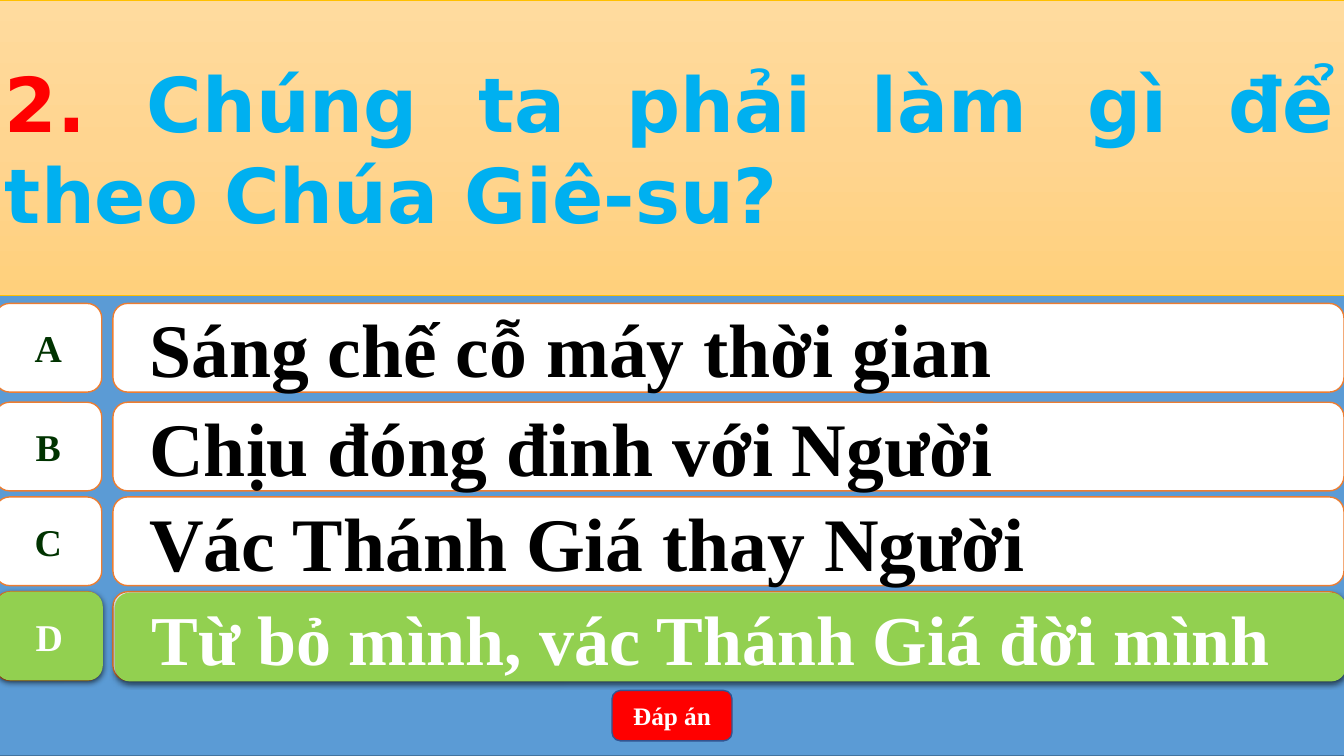
"""Builds a quiz slide with one question, four answers and the right one lit."""
from copy import deepcopy

from lxml.etree import SubElement
from pptx import Presentation
from pptx.dml.color import RGBColor
from pptx.enum.shapes import MSO_SHAPE as Shape
from pptx.enum.text import MSO_ANCHOR as Anchor, PP_ALIGN as Align
from pptx.oxml.ns import qn
from pptx.util import Inches, Pt

SERIF = "Times New Roman"
SANS = "DejaVu Sans"
WHITE, BLACK, ORANGE, GREEN = "FFFFFF", "000000", "ED7D31", "92D050"


def color(value):
    """Turn a hex string into a colour."""
    return RGBColor.from_string(value)


class QuizSlide:
    """Holds the style and the current slide."""

    def __init__(self, deck):
        """Add a blank slide to the deck."""
        self.slide = deck.slides.add_slide(deck.slide_layouts[6])

    def panel(self, kind, box, fill, line=None, width=1):
        """Draw a filled shape without a shadow."""
        panel = self.slide.shapes.add_shape(kind, *map(Inches, box))
        panel.shadow.inherit = False
        panel.fill.solid()
        panel.fill.fore_color.rgb = color(fill)
        if line:
            panel.line.color.rgb = color(line)
            panel.line.width = Pt(width)
        else:
            panel.line.fill.background()
        return panel

    def gradient(self, panel, tints):
        """Fill a panel from top to bottom with evenly spaced tints."""
        panel.fill.gradient()
        panel.fill.gradient_angle = 270
        stop_list = panel._element.spPr.find(".//" + qn("a:gsLst"))
        while len(stop_list) < len(tints):
            stop_list.append(deepcopy(stop_list[0]))
        for index, (stop, tint) in enumerate(zip(panel.fill.gradient_stops, tints)):
            stop.color.rgb = color(tint)
            stop.position = index / (len(tints) - 1)

    def glow(self, panel):
        """Cast a soft shadow straight down."""
        effects = panel._element.spPr.find(qn("a:effectLst"))
        shadow = SubElement(effects, qn("a:outerShdw"), blurRad=str(Pt(4.5)),
                            dist=str(Pt(1.5)), dir="5400000", algn="ctr", rotWithShape="0")
        tone = SubElement(shadow, qn("a:srgbClr"), val=BLACK)
        SubElement(tone, qn("a:alpha"), val="63000")

    def caption(self, panel, pieces, size, font=SERIF, align=Align.CENTER, wrap=True):
        """Put bold coloured pieces of text in one paragraph."""
        frame = panel.text_frame
        frame.word_wrap = wrap
        frame.vertical_anchor = Anchor.MIDDLE
        paragraph = frame.paragraphs[0]
        paragraph.alignment = align
        style = {"name": font, "size": Pt(size), "bold": True}
        for words, tint in pieces:
            run = paragraph.add_run()
            run.text = words
            for key, value in style.items():
                setattr(run.font, key, value)
            run.font.color.rgb = color(tint)
        return paragraph

    def plates(self, left, top, answer_shift, fill, line=None):
        """Draw the letter plate and the answer plate of one row."""
        badge = self.panel(Shape.FLOWCHART_ALTERNATE_PROCESS,
                           (left, top, 1.06, 0.88), fill, line)
        answer = self.panel(Shape.ROUNDED_RECTANGLE,
                            (left + 1.17 + answer_shift, top + answer_shift, 12.21, 0.88),
                            fill, line)
        return badge, answer

    def label(self, badge, answer, letter, words, size, letter_tint, words_tint):
        """Put the letter and the answer on their plates."""
        self.caption(badge, [(letter, letter_tint)], 27, wrap=False)
        paragraph = self.caption(answer, [(words, words_tint)], size, align=Align.LEFT)
        paragraph.level = 1
        indents = {"marL": Inches(0.5), "indent": Inches(-0.28)}
        for key, value in indents.items():
            paragraph._p.get_or_add_pPr().set(key, str(value))


def main():
    """Build and save the slide."""
    deck = Presentation()
    deck.slide_width, deck.slide_height = Inches(13.33), Inches(7.5)
    quiz = QuizSlide(deck)
    quiz.panel(Shape.RECTANGLE, (-0.05, 0, 13.39, 7.5), "5B9BD5", "43739E")

    wrong_answers = [
        ("A", 3.01, "Sáng chế cỗ máy thời gian"),
        ("B", 3.99, "Chịu đóng đinh với Người"),
        ("C", 4.93, "Vác Thánh Giá thay Người"),
    ]
    for letter, top, words in wrong_answers:
        badge, answer = quiz.plates(-0.05, top, 0, WHITE, ORANGE)
        quiz.label(badge, answer, letter, words, 54, "003300", BLACK)

    quiz.plates(-0.05, 5.87, 0, WHITE, ORANGE)
    right_plates = quiz.plates(-0.04, 5.87, 0.01, GREEN)
    for plate in right_plates:
        quiz.glow(plate)
    quiz.label(*right_plates, "D", "Từ bỏ mình, vác Thánh Giá đời mình", 50, WHITE, WHITE)

    reveal = quiz.panel(Shape.ROUNDED_RECTANGLE, (6.07, 6.85, 1.19, 0.5), "FF0000", "325491")
    quiz.caption(reveal, [("Đáp án", WHITE)], 18)

    question = quiz.panel(Shape.RECTANGLE, (-0.05, 0, 13.39, 2.93), "FFD590", "FFC000", 0.5)
    quiz.gradient(question, ["FFDB9E", "FFD590", "FFD07C"])
    quiz.caption(question, [("2. ", "FF0000"),
                            ("Chúng ta phải làm gì để theo Chúa Giê-su?", "00B0F0")],
                 54, SANS, Align.JUSTIFY)
    deck.save("out.pptx")


if __name__ == "__main__":
    main()
